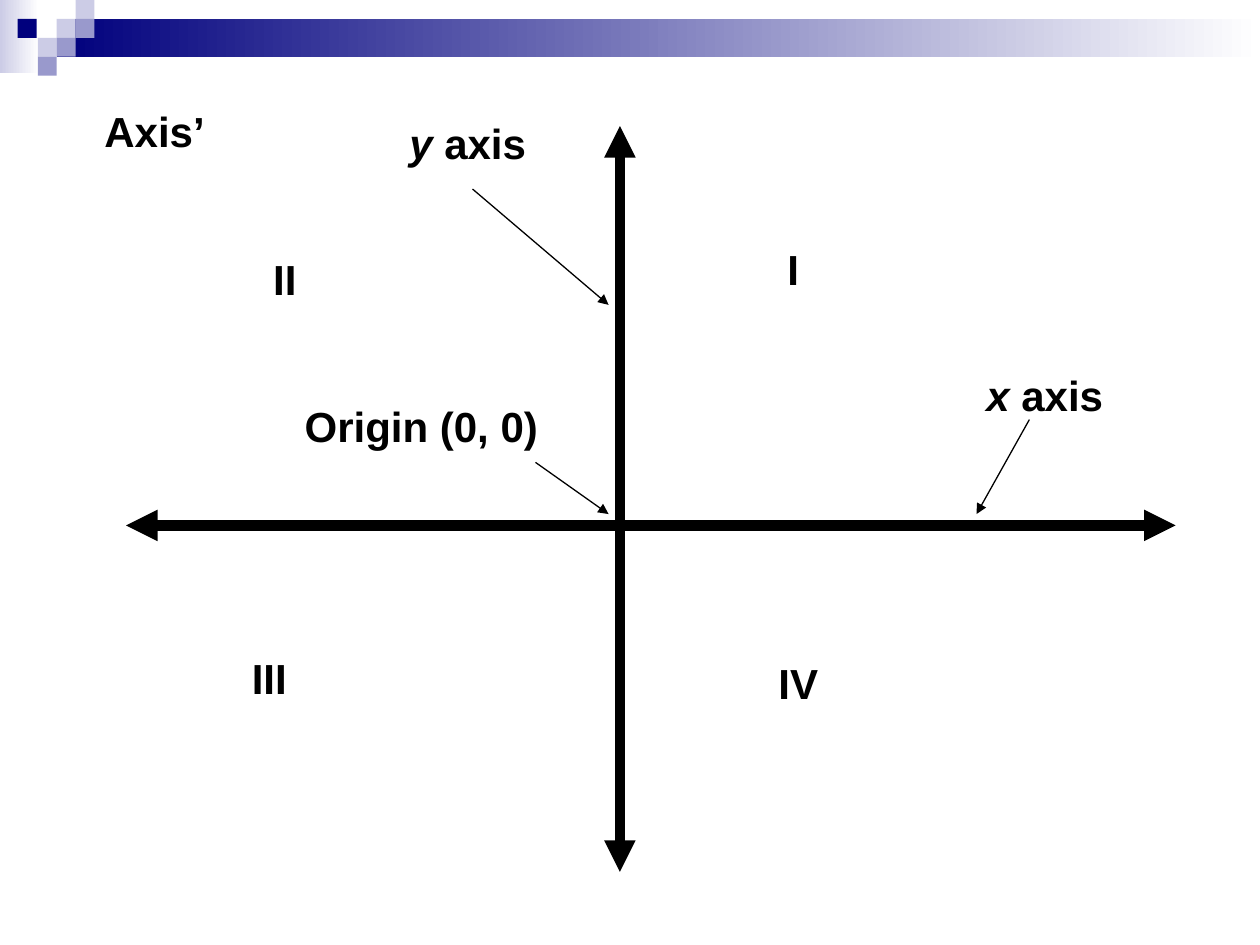
from typing import NamedTuple

from lxml import etree
from pptx import Presentation
from pptx.dml.color import RGBColor
from pptx.enum.shapes import MSO_CONNECTOR, MSO_SHAPE
from pptx.enum.text import MSO_AUTO_SIZE
from pptx.oxml.ns import qn
from pptx.util import Inches, Pt

RECTANGLE = MSO_SHAPE.RECTANGLE
STRAIGHT = MSO_CONNECTOR.STRAIGHT
FIT_SHAPE = MSO_AUTO_SIZE.SHAPE_TO_FIT_TEXT

BLACK = RGBColor(0x00, 0x00, 0x00)
WHITE = RGBColor(0xFF, 0xFF, 0xFF)
NAVY = RGBColor(0x00, 0x00, 0x7D)
LAVENDER = RGBColor(0xCC, 0xCC, 0xE6)
PERIWINKLE = RGBColor(0x99, 0x99, 0xCC)

TILE = 0.15
LABEL_HEIGHT = 0.5


class Band(NamedTuple):
    left: float
    top: float
    width: float
    height: float
    start: RGBColor
    end: RGBColor | None = None


class Label(NamedTuple):
    text: str
    left: float
    top: float
    width: float
    variable: str = ""


class Arrow(NamedTuple):
    start: tuple[float, float]
    end: tuple[float, float]
    weight: float = 0.75
    double: bool = False


def tile(column: int, row: int, color: RGBColor) -> Band:
    return Band(column * TILE, row * TILE, TILE, TILE, color)


BANDS = [
    Band(0, 0, 0.31, 0.58, LAVENDER, WHITE),
    Band(0.45, 0.15, 9.55, 0.3, NAVY, WHITE),
    tile(3, 1, LAVENDER),
    tile(4, 0, LAVENDER),
    tile(4, 1, PERIWINKLE),
    tile(2, 2, LAVENDER),
    Band(0.14, 0.15, TILE, TILE, NAVY),
    tile(3, 2, PERIWINKLE),
    tile(2, 3, PERIWINKLE),
]

ARROWS = [
    Arrow((4.92, 1), (4.92, 6.92), weight=6, double=True),
    Arrow((1, 4.17), (9.33, 4.17), weight=6, double=True),
    Arrow((3.75, 1.5), (4.83, 2.42)),
    Arrow((8.17, 3.33), (7.75, 4.08)),
    Arrow((4.25, 3.67), (4.83, 4.08)),
]

LABELS = [
    Label("I", 6.15, 1.88, 0.29),
    Label("II", 2.07, 1.96, 0.39),
    Label("III", 1.9, 5.13, 0.48),
    Label("IV", 6.08, 5.17, 0.52),
    Label("Axis’", 0.73, 0.79, 1),
    Label(" axis", 7.73, 2.88, 1.13, variable="x"),
    Label(" axis", 3.15, 0.88, 1.13, variable="y"),
    Label("Origin (0, 0)", 2.32, 3.13, 2.05),
]


def draw_band(slide, band: Band) -> None:
    """Draw a borderless rectangle, fading to the right if it has an end colour."""
    shape = slide.shapes.add_shape(
        RECTANGLE, Inches(band.left), Inches(band.top), Inches(band.width), Inches(band.height)
    )
    shape.shadow.inherit = False
    shape.line.fill.background()
    if band.end is None:
        shape.fill.solid()
        shape.fill.fore_color.rgb = band.start
        return
    shape.fill.gradient()
    shape.fill.gradient_angle = 0
    for stop, color in zip(shape.fill.gradient_stops, (band.start, band.end)):
        stop.color.rgb = color


def draw_arrow(slide, arrow: Arrow) -> None:
    connector = slide.shapes.add_connector(
        STRAIGHT, *(Inches(value) for value in arrow.start + arrow.end)
    )
    connector.line.color.rgb = BLACK
    connector.line.width = Pt(arrow.weight)
    properties = connector._element.spPr
    line = properties.find(qn("a:ln"))
    for end in ("a:headEnd", "a:tailEnd") if arrow.double else ("a:tailEnd",):
        etree.SubElement(line, qn(end), type="triangle")
    etree.SubElement(properties, qn("a:effectLst"))


def add_text(paragraph, text: str, *, size: float = 24, bold: bool = True,
             italic: bool = False, color: RGBColor = BLACK, font: str = "Arial") -> None:
    run = paragraph.add_run()
    run.text = text
    run.font.name = font
    run.font.size = Pt(size)
    run.font.bold = bold
    run.font.italic = italic
    run.font.color.rgb = color


def draw_label(slide, label: Label) -> None:
    box = slide.shapes.add_textbox(
        Inches(label.left), Inches(label.top), Inches(label.width), Inches(LABEL_HEIGHT)
    )
    frame = box.text_frame
    frame.word_wrap = False
    frame.auto_size = FIT_SHAPE
    paragraph = frame.paragraphs[0]
    if label.variable:
        add_text(paragraph, label.variable, italic=True)
    add_text(paragraph, label.text)


def main() -> None:
    presentation = Presentation()
    presentation.slide_width = Inches(10)
    presentation.slide_height = Inches(7.5)
    slide = presentation.slides.add_slide(presentation.slide_layouts[6])
    for band in BANDS:
        draw_band(slide, band)
    for arrow in ARROWS:
        draw_arrow(slide, arrow)
    for label in LABELS:
        draw_label(slide, label)
    presentation.save("out.pptx")


if __name__ == "__main__":
    main()
